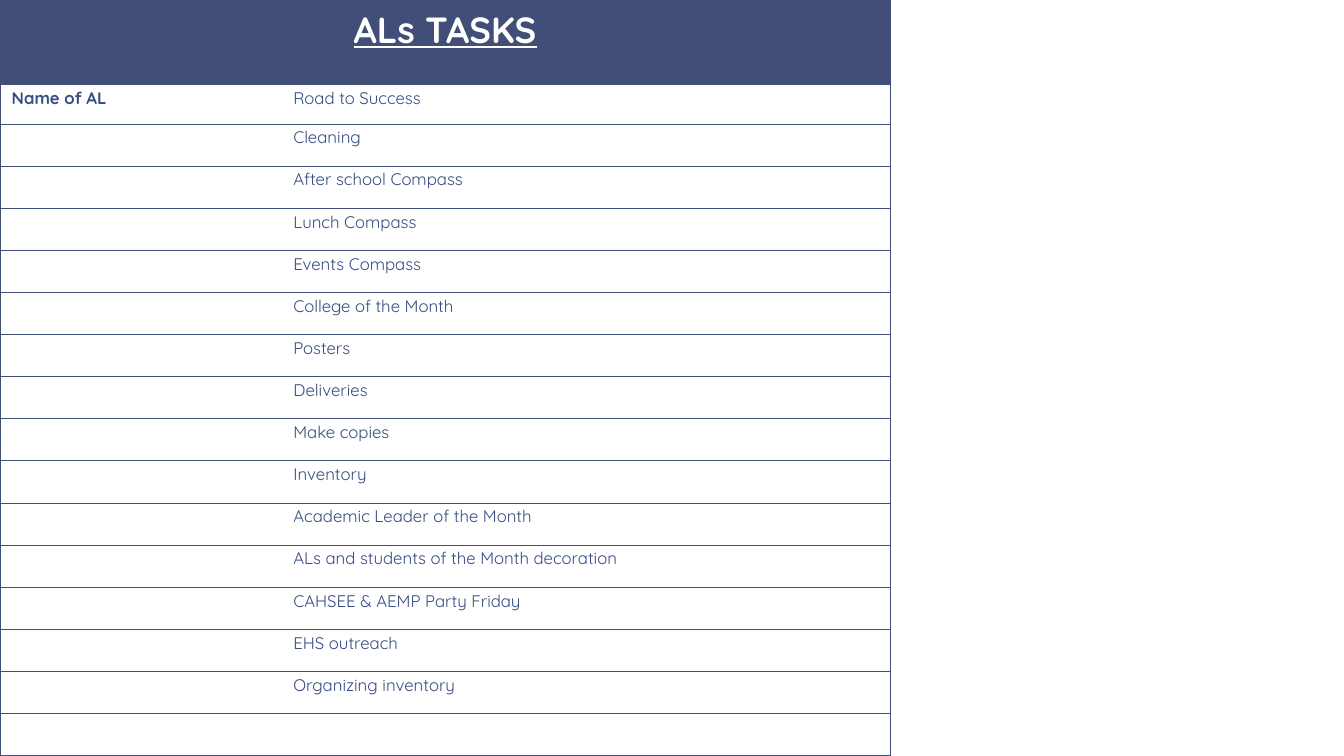
from dataclasses import dataclass

from lxml import etree
from pptx import Presentation
from pptx import util as u
from pptx.dml.color import RGBColor
from pptx.enum import text
from pptx.oxml import ns
from pptx.table import Table, _Cell

SLIDE_WIDTH, SLIDE_HEIGHT = 13.33, 7.5
COLUMN_WIDTHS = (2.84, 5.99)
TITLE_HEIGHT, FIRST_TASK_HEIGHT = 0.84, 0.39
FONT = "Quicksand"
NAVY, TEXT_BLUE, WHITE = "414E77", "374C81", "FFFFFF"
BORDER_POINTS = 0.5
NO_STYLE_NO_GRID = "{2D5ABB26-0587-4C30-8999-92F81FD0307C}"


@dataclass
class TaskRow:
    task: str
    leader: str = ""


TASK_ROWS = [
    TaskRow("Road to Success", leader=" Name of AL"),
    TaskRow("Cleaning"),
    TaskRow("After school Compass"),
    TaskRow("Lunch Compass"),
    TaskRow("Events Compass"),
    TaskRow("College of the Month"),
    TaskRow("Posters"),
    TaskRow("Deliveries"),
    TaskRow("Make copies"),
    TaskRow("Inventory"),
    TaskRow("Academic Leader of the Month"),
    TaskRow("ALs and students of the Month decoration"),
    TaskRow("CAHSEE & AEMP Party Friday"),
    TaskRow("EHS outreach"),
    TaskRow("Organizing inventory"),
    TaskRow(""),
]


def color(hex_string: str) -> RGBColor:
    return RGBColor.from_string(hex_string)


def write_text(cell: _Cell, words: str, *, size: float = 12, ink: str = TEXT_BLUE,
               bold: bool = False, underline: bool = False,
               align: text.PP_ALIGN = text.PP_ALIGN.LEFT) -> None:
    paragraph = cell.text_frame.paragraphs[0]
    paragraph.alignment = align
    paragraph.line_spacing = 1.15
    paragraph.font.size = u.Pt(size)
    if not words:
        return
    run = paragraph.add_run()
    run.text = words
    run.font.name = FONT
    run.font.size = u.Pt(size)
    run.font.bold = bold
    run.font.underline = underline
    run.font.color.rgb = color(ink)


def format_cell(cell: _Cell, fill: str | None, sides: str) -> None:
    """Set insets, fill and borders; sides holds the letters of the drawn edges."""
    cell.margin_left = cell.margin_right = u.Inches(0.07)
    cell.margin_top = cell.margin_bottom = 0
    if fill:
        cell.fill.solid()
        cell.fill.fore_color.rgb = color(fill)
    else:
        cell.fill.background()
    properties = cell._tc.get_or_add_tcPr()
    for position, side in enumerate("LRTB"):
        line = etree.Element(ns.qn(f"a:ln{side}"), w=str(u.Pt(BORDER_POINTS)))
        if side in sides:
            solid = etree.SubElement(line, ns.qn("a:solidFill"))
            etree.SubElement(solid, ns.qn("a:srgbClr"), val=NAVY)
        else:
            etree.SubElement(line, ns.qn("a:noFill"))
        properties.insert(position, line)


def size_grid(table: Table) -> None:
    for column, width in zip(table.columns, COLUMN_WIDTHS):
        column.width = u.Inches(width)
    other_rows = len(TASK_ROWS) - 1
    other_height = (SLIDE_HEIGHT - TITLE_HEIGHT - FIRST_TASK_HEIGHT) / other_rows
    heights = [TITLE_HEIGHT, FIRST_TASK_HEIGHT] + [other_height] * other_rows
    for row, height in zip(table.rows, heights):
        row.height = u.Inches(height)


def fill_table(table: Table) -> None:
    title = table.cell(0, 0)
    title.merge(table.cell(0, 1))
    write_text(title, "ALs TASKS", size=26, ink=WHITE, bold=True, underline=True,
               align=text.PP_ALIGN.CENTER)
    format_cell(title, NAVY, "LRTB")
    format_cell(table.cell(0, 1), NAVY, "RTB")
    for index, task_row in enumerate(TASK_ROWS, start=1):
        leader, task = table.cell(index, 0), table.cell(index, 1)
        write_text(leader, task_row.leader, bold=True)
        write_text(task, task_row.task)
        format_cell(leader, None, "LTB")
        format_cell(task, None, "RTB")


def main() -> None:
    presentation = Presentation()
    presentation.slide_width = u.Inches(SLIDE_WIDTH)
    presentation.slide_height = u.Inches(SLIDE_HEIGHT)
    slide = presentation.slides.add_slide(presentation.slide_layouts[6])
    frame = slide.shapes.add_table(len(TASK_ROWS) + 1, len(COLUMN_WIDTHS), 0, 0,
                                   u.Inches(sum(COLUMN_WIDTHS)), u.Inches(SLIDE_HEIGHT))
    table = frame.table
    table.first_row = table.horz_banding = False
    table._tbl.tblPr.find(ns.qn("a:tableStyleId")).text = NO_STYLE_NO_GRID
    size_grid(table)
    fill_table(table)
    presentation.save("out.pptx")


if __name__ == "__main__":
    main()
